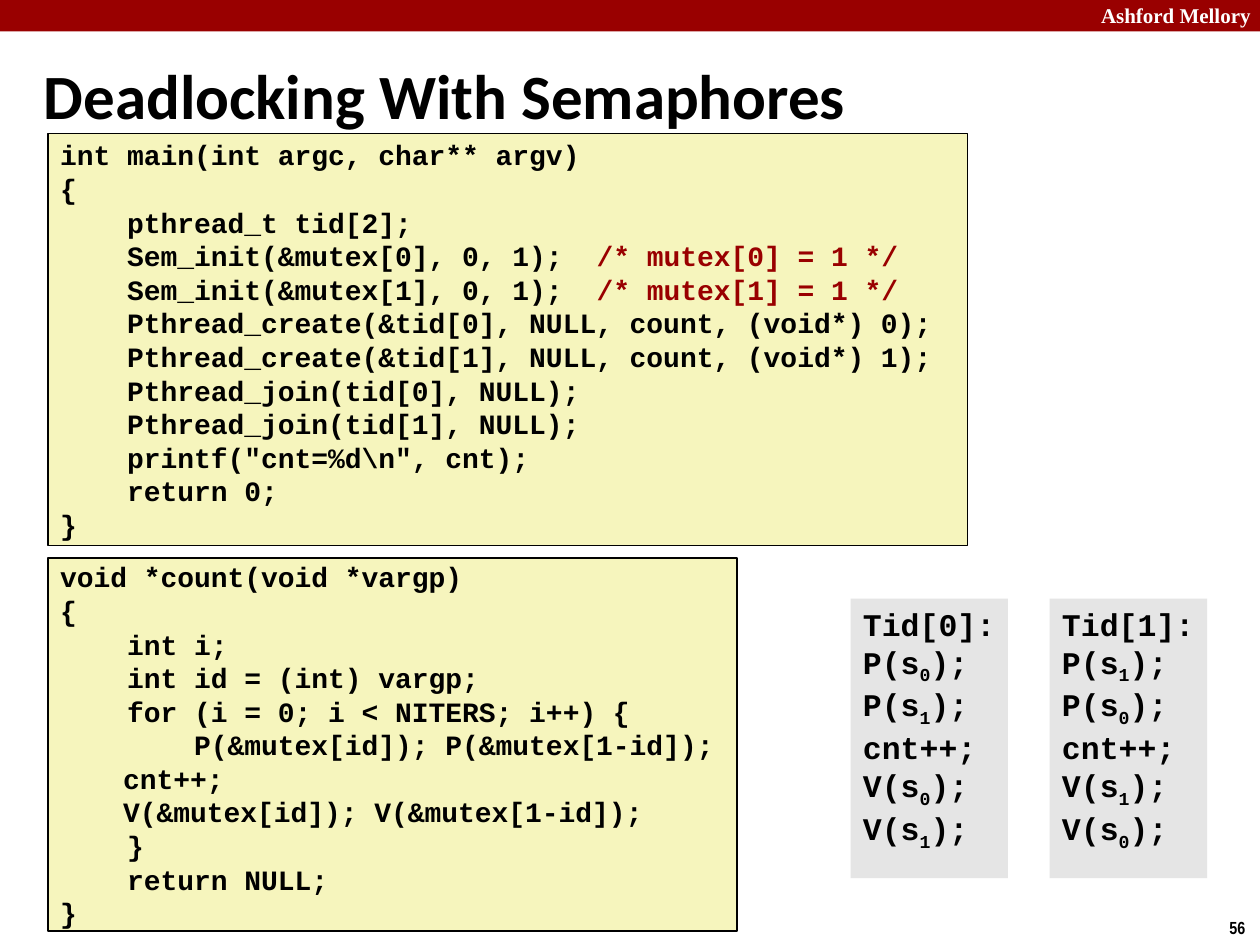
import pptx
import pptx.dml.color
import pptx.enum.shapes
import pptx.enum.text
import pptx.util
from pptx.util import Inches

RED = pptx.dml.color.RGBColor(0x99, 0x00, 0x00)
BLACK = pptx.dml.color.RGBColor(0x00, 0x00, 0x00)
WHITE = pptx.dml.color.RGBColor(0xFF, 0xFF, 0xFF)
CODE_YELLOW = pptx.dml.color.RGBColor(0xF6, 0xF5, 0xBD)
TRACE_GRAY = pptx.dml.color.RGBColor(0xE5, 0xE5, 0xE5)

ANCHOR = pptx.enum.text.MSO_ANCHOR
CODE_FONT = {"name": "Courier New", "size": pptx.util.Pt(16), "bold": True}
TRACE_FONT = CODE_FONT | {"size": pptx.util.Pt(18)}

MAIN_CODE = r"""int main(int argc, char** argv)
{
    pthread_t tid[2];
    Sem_init(&mutex[0], 0, 1);  /* mutex[0] = 1 */
    Sem_init(&mutex[1], 0, 1);  /* mutex[1] = 1 */
    Pthread_create(&tid[0], NULL, count, (void*) 0);
    Pthread_create(&tid[1], NULL, count, (void*) 1);
    Pthread_join(tid[0], NULL);
    Pthread_join(tid[1], NULL);
    printf("cnt=%d\n", cnt);
    return 0;
}"""

COUNT_CODE = """void *count(void *vargp)
{
    int i;
    int id = (int) vargp;
    for (i = 0; i < NITERS; i++) {
        P(&mutex[id]); P(&mutex[1-id]);
\tcnt++;
\tV(&mutex[id]); V(&mutex[1-id]);
    }
    return NULL;
}"""


def set_attributes(target, values):
    for name, value in values.items():
        setattr(target, name, value)


def add_run(paragraph, text, font, color=BLACK):
    run = paragraph.add_run()
    run.text = text
    set_attributes(run.font, font)
    run.font.color.rgb = color
    return run


def format_frame(frame, anchor=ANCHOR.TOP, margin=0.05):
    set_attributes(frame, {
        "word_wrap": True,
        "vertical_anchor": anchor,
        "margin_left": Inches(0.1),
        "margin_right": Inches(0.1),
        "margin_top": Inches(margin),
        "margin_bottom": Inches(margin),
    })


def add_lines(frame, lines):
    """Yield each line with a left-aligned paragraph to hold it."""
    for index, line in enumerate(lines):
        paragraph = frame.add_paragraph() if index else frame.paragraphs[0]
        paragraph.alignment = pptx.enum.text.PP_ALIGN.LEFT
        yield line, paragraph


def add_panel(slide, box, fill, outlined=False):
    shape = slide.shapes.add_shape(
        pptx.enum.shapes.MSO_SHAPE.RECTANGLE, *map(Inches, box))
    shape.shadow.inherit = False
    shape.fill.solid()
    shape.fill.fore_color.rgb = fill
    if outlined:
        shape.line.color.rgb = BLACK
        shape.line.width = pptx.util.Pt(1)
    else:
        shape.line.fill.background()
    return shape


def add_label(slide, box, text, font_name, size, color=BLACK, anchor=ANCHOR.TOP):
    frame = slide.shapes.add_textbox(*map(Inches, box)).text_frame
    format_frame(frame, anchor)
    font = {"name": font_name, "size": pptx.util.Pt(size), "bold": True}
    add_run(frame.paragraphs[0], text, font, color)


def add_code_panel(slide, box, code):
    """Draw a code listing, with its comments in red."""
    frame = add_panel(slide, box, CODE_YELLOW, outlined=True).text_frame
    format_frame(frame, ANCHOR.MIDDLE, margin=0)
    for line, paragraph in add_lines(frame, code.split("\n")):
        statement, opening, comment = line.partition("/*")
        add_run(paragraph, statement, CODE_FONT)
        if opening:
            add_run(paragraph, opening + comment, CODE_FONT, RED)


def add_thread_trace(slide, box, thread):
    """List the steps of a thread, which locks its own semaphore first."""
    frame = add_panel(slide, box, TRACE_GRAY).text_frame
    format_frame(frame)
    own, other = thread, 1 - thread
    steps = [f"Tid[{thread}]:", f"P(s_{own});", f"P(s_{other});", "cnt++;",
             f"V(s_{own});", f"V(s_{other});"]
    for step, paragraph in add_lines(frame, steps):
        call, underscore, rest = step.partition("_")
        add_run(paragraph, call, TRACE_FONT)
        if underscore:
            subscript = add_run(paragraph, rest[0], TRACE_FONT)
            subscript.font._element.set("baseline", "-25000")
            add_run(paragraph, rest[1:], TRACE_FONT)


def add_page_frame(slide):
    add_panel(slide, (0, 0, 10, 0.25), RED)
    add_label(slide, (8.64, -0.03, 1.43, 0.3), "Ashford Mellory",
              "Times New Roman", 12, WHITE)
    add_label(slide, (9.66, 7.23, 0.34, 0.27), "56", "Arial Narrow", 10)


def main():
    presentation = pptx.Presentation()
    presentation.slide_width = Inches(10)
    presentation.slide_height = Inches(7.5)
    slide = presentation.slides.add_slide(presentation.slide_layouts[6])

    add_page_frame(slide)
    add_label(slide, (0.25, 0.33, 8.3, 0.83), "Deadlocking With Semaphores",
              "Calibri", 36, anchor=ANCHOR.MIDDLE)
    add_code_panel(slide, (0.38, 1.06, 7.3, 3.27), MAIN_CODE)
    add_code_panel(slide, (0.38, 4.43, 5.47, 2.96), COUNT_CODE)
    for thread in range(2):
        add_thread_trace(slide, (6.75 + 1.58 * thread, 4.75, 1.25, 2.22), thread)

    presentation.save("out.pptx")


if __name__ == "__main__":
    main()
